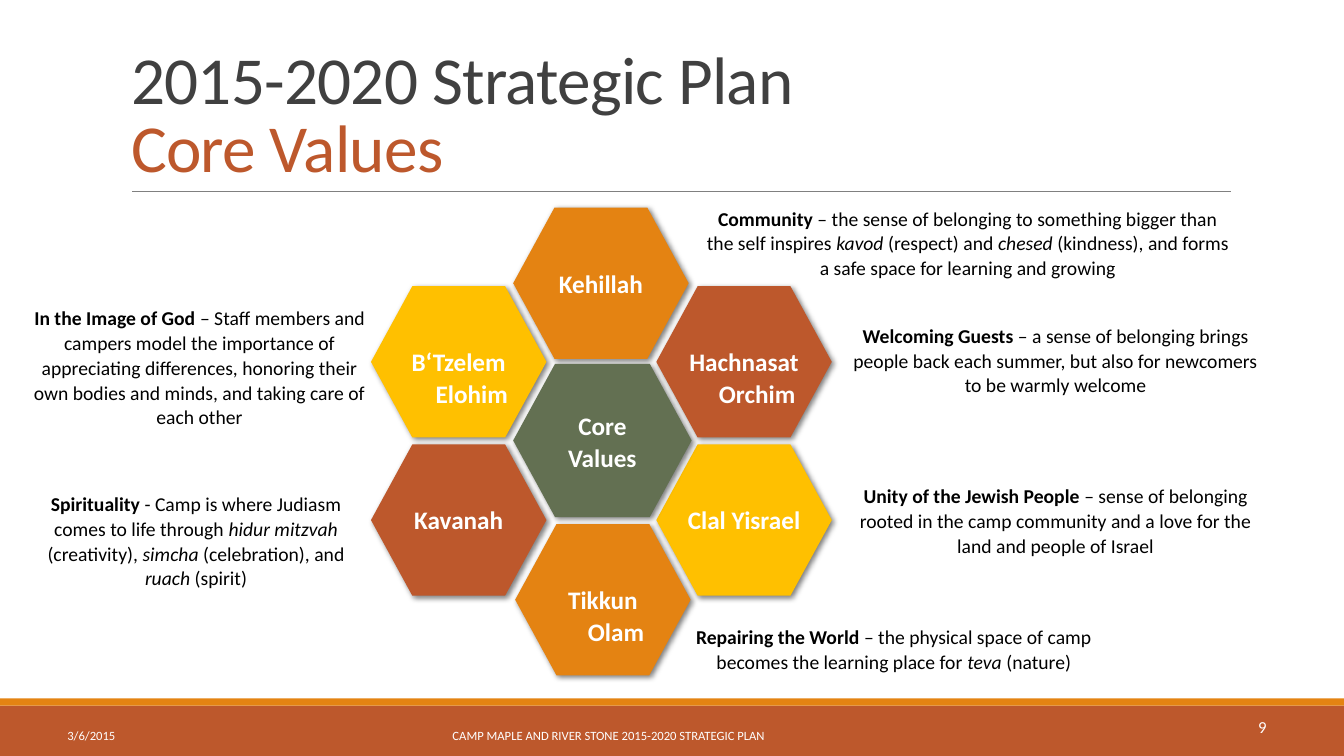
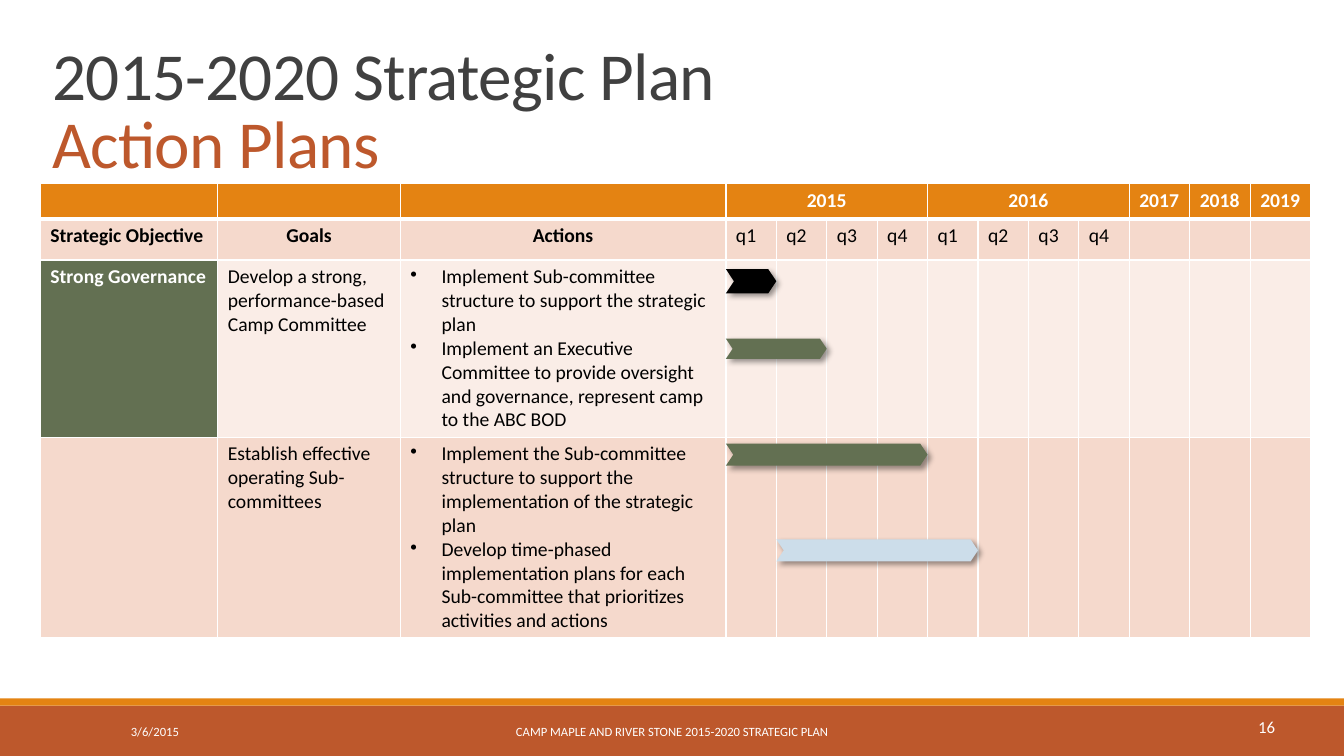
from lxml.etree import SubElement
from pptx import Presentation
from pptx.dml.color import RGBColor
from pptx.enum.shapes import MSO_CONNECTOR, MSO_SHAPE
from pptx.enum.text import MSO_ANCHOR, MSO_AUTO_SIZE, PP_ALIGN
from pptx.oxml.ns import qn
from pptx.util import Inches, Pt

# Shared look
FONT = "Calibri"
RUST, AMBER, GOLD, GREEN = "BD582C", "E48312", "FFC000", "637052"
PALE, FAINT, SKY = "F5D9CC", "FAEDE7", "CCDDEA"
WHITE, BLACK, DARK, GRAY = "FFFFFF", "000000", "404040", "808080"
FOOTER = "CAMP MAPLE AND RIVER STONE 2015-2020 STRATEGIC PLAN"

# Core values: left, top, fill, text
VALUES = [
    (5.09, 2.06, AMBER, "Kehillah"),
    (5.11, 5.2, AMBER, "Tikkun Olam"),
    (6.51, 2.84, RUST, "Hachnasat Orchim"),
    (3.68, 2.84, GOLD, "B‘Tzelem Elohim"),
    (6.51, 4.41, GOLD, "Clal Yisrael"),
    (3.68, 4.41, RUST, "Kavanah"),
]

# Meanings: box, left and right inset, parts (bold, then plain and italic by turns)
NOTES = [
    ((6.87, 2.04, 5.33, 0.73), (0.13, 0),
     ["Community", " – the sense of belonging to something bigger than the self inspires ",
      "kavod", " (respect) and ", "chesed",
      " (kindness), and forms a safe space for learning and growing"]),
    ((8.27, 2.81, 4.27, 1.52), (0.13, 0),
     ["Welcoming Guests ", "– a sense of belonging brings people back each summer, "
      "but also for newcomers to be warmly welcome"]),
    ((8.27, 4.4, 4.27, 1.52), (0.13, 0),
     ["Unity of the Jewish People ", "– sense of belonging rooted in the camp community "
      "and a love for the land and people of Israel"]),
    ((0.26, 2.88, 3.57, 1.52), (0, 0.13),
     ["In the Image of God ", "– Staff members and campers model the importance of "
      "appreciating differences, honoring their own bodies and minds, "
      "and taking care of each other"]),
    ((0.31, 4.6, 3.4, 1.52), (0, 0.13),
     ["Spirituality", " - Camp is where Judiasm comes to life through ",
      "hidur mitzvah ", "(creativity), ", "simcha", " (celebration), and ",
      "ruach", " (spirit)"]),
    ((6.7, 6.04, 4.2, 0.79), (0.13, 0),
     ["Repairing the World ", "– the physical space of camp becomes the learning place for ",
      "teva", " (nature)"]),
]

# Action plan table
COLS = [1.76, 1.81, 3.23] + [0.5] * 8 + [0.6] * 3
ROWS = [0.35, 0.41, 1.75, 1.99]
LEFT, TOP = 0.4, 1.82
START = LEFT + sum(COLS[:3])
FILLS = [AMBER, PALE, FAINT, PALE]
QUARTERS = ["q1", "q2", "q3", "q4"]
CELLS = [
    ["", "", "", "2015", "", "", "", "2016", "", "", "", "2017", "2018", "2019"],
    ["Strategic Objective", "Goals", "Actions"] + QUARTERS * 2 + [""] * 3,
    ["Strong Governance", "Develop a strong, performance-based Camp Committee",
     "Implement Sub-committee structure to support the strategic plan\n"
     "Implement an Executive Committee to provide oversight and governance, "
     "represent camp to the ABC BOD"] + [""] * 11,
    ["", "Establish effective operating Sub-committees",
     "Implement the Sub-committee structure to support the implementation of the "
     "strategic plan\n"
     "Develop time-phased implementation plans for each Sub-committee that "
     "prioritizes activities and actions"] + [""] * 11,
]

# Bars: first quarter, number of quarters, top, height, fill
BARS = [
    (0, 1, 2.67, 0.24, BLACK),
    (0, 2, 3.36, 0.2, GREEN),
    (0, 4, 4.4, 0.22, GREEN),
    (1, 4, 5.35, 0.22, SKY),
]


def color(code):
    return RGBColor.from_string(code)


def box(*sizes):
    return [Inches(size) for size in sizes]


def style(run, size, code, bold=False, italic=False):
    font = run.font
    font.name, font.size, font.bold, font.italic = FONT, Pt(size), bold, italic
    font.color.rgb = color(code)


def hang(para, left, bullet=None):
    """Give a paragraph a hanging indent and, if asked, a bullet."""
    props = para._p.get_or_add_pPr()
    props.set("marL", str(Inches(left)))
    props.set("indent", str(-Inches(left)))
    if bullet:
        SubElement(props, qn("a:buChar")).set("char", bullet)


def inset(frame, left, top, right, bottom):
    frame.margin_left, frame.margin_top = Inches(left), Inches(top)
    frame.margin_right, frame.margin_bottom = Inches(right), Inches(bottom)


def add_shape(slide, kind, place, fill):
    shape = slide.shapes.add_shape(kind, *box(*place))
    shape.shadow.inherit = False
    shape.fill.solid()
    shape.fill.fore_color.rgb = color(fill)
    shape.line.fill.background()
    return shape


def add_shadow(shape, alpha, dist):
    effects = shape.element.spPr.find(qn("a:effectLst"))
    outer = SubElement(effects, qn("a:outerShdw"), blurRad=str(Pt(4)),
                       dist=str(Pt(dist)), dir="2700000", algn="tl", rotWithShape="0")
    tint = SubElement(outer, qn("a:srgbClr"), val=BLACK)
    SubElement(tint, qn("a:alpha"), val=str(alpha * 1000))


def add_label(slide, place, text, size, align=PP_ALIGN.LEFT, wrap=True):
    frame = slide.shapes.add_textbox(*box(*place)).text_frame
    frame.word_wrap = wrap
    frame.vertical_anchor = MSO_ANCHOR.MIDDLE if wrap else MSO_ANCHOR.TOP
    frame.text = text
    para = frame.paragraphs[0]
    para.alignment = align
    style(para.runs[0], size, WHITE)


def add_note(slide, place, sides, parts):
    frame = slide.shapes.add_textbox(*box(*place)).text_frame
    frame.word_wrap = True
    frame.vertical_anchor = MSO_ANCHOR.MIDDLE
    inset(frame, sides[0], 0, sides[1], 0)
    para = frame.paragraphs[0]
    para.alignment, para.line_spacing = PP_ALIGN.CENTER, 1.05
    for index, part in enumerate(parts):
        run = para.add_run()
        run.text = part
        style(run, 14, BLACK, index == 0, index > 0 and index % 2 == 0)


def add_hexagon(slide, place, fill, text, middle=False):
    shape = add_shape(slide, MSO_SHAPE.HEXAGON, place, fill)
    shape.adjustments[0] = 0.273
    add_shadow(shape, 50, 2)
    frame = shape.text_frame
    frame.word_wrap = True
    frame.text = text
    para = frame.paragraphs[0]
    para.alignment, para.line_spacing = PP_ALIGN.CENTER, 1.05
    style(para.runs[0], 18, WHITE, True)
    if middle:
        frame.vertical_anchor = MSO_ANCHOR.MIDDLE
        inset(frame, 0.1, 0, 0.1, 0)
    else:
        frame.vertical_anchor = MSO_ANCHOR.TOP
        inset(frame, 0, 0.34, 0, 0)
        hang(para, 0.26)


def dress(slide, layout):
    """Draw the bands and the title rule, then move them to the layout."""
    low = add_shape(slide, MSO_SHAPE.RECTANGLE, (0, 7, 13.33, 0.5), RUST)
    high = add_shape(slide, MSO_SHAPE.RECTANGLE, (0, 6.93, 13.33, 0.07), AMBER)
    rule = slide.shapes.add_connector(MSO_CONNECTOR.STRAIGHT, *box(1.31, 1.9, 12.21, 1.9))
    rule.line.color.rgb, rule.line.width = color(GRAY), Pt(0.5)
    SubElement(rule.element.spPr, qn("a:effectLst"))
    for part in (low, high, rule):
        layout.shapes.element.append(part.element)


def add_slide(deck, layout, topic, corner):
    slide = deck.slides.add_slide(layout)
    title = slide.shapes.title
    title.left, title.top, title.width, title.height = box(*corner, 11, 1.59)
    frame = title.text_frame
    frame.text = "2015-2020 Strategic Plan\v" + topic
    frame.vertical_anchor, frame.auto_size = MSO_ANCHOR.BOTTOM, MSO_AUTO_SIZE.NONE
    para = frame.paragraphs[0]
    para.alignment, para.line_spacing = PP_ALIGN.LEFT, 0.85
    for run, code in zip(para.runs, (DARK, RUST)):
        style(run, 48, code)
        run.font._element.set("spc", "-50")
    return slide


def add_footer(slide, left, top, number):
    add_label(slide, (left, top, 2.7, 0.4), "3/6/2015", 9)
    add_label(slide, (left + 2.83, top, 5.27, 0.4), FOOTER, 9, PP_ALIGN.CENTER)
    add_label(slide, (12.38, 7.06, 0.37, 0.3), number, 12, wrap=False)


def add_borders(cell, header):
    props = cell._tc.get_or_add_tcPr()
    for index, side in enumerate("LRTB"):
        width = 3 if header and side == "B" else 1
        line = SubElement(props, qn("a:ln" + side), w=str(Pt(width)))
        SubElement(SubElement(line, qn("a:solidFill")), qn("a:srgbClr"), val=WHITE)
        props.insert(index, line)


def fill_cell(cell, row, col, text):
    strong = (row, col) == (2, 0)
    cell.fill.solid()
    cell.fill.fore_color.rgb = color(GREEN if strong else FILLS[row])
    add_borders(cell, row == 0)
    cell.text = text
    centered = (row == 0 and col < 11) or (row == 1 and col in (1, 2))
    bold = row == 0 or strong or (row == 1 and col < 3)
    for para in cell.text_frame.paragraphs:
        para.alignment = PP_ALIGN.CENTER if centered else PP_ALIGN.LEFT
        if row > 1 and col == 2:
            hang(para, 0.31, "•")
        for run in para.runs:
            style(run, 14, WHITE if row == 0 or strong else BLACK, bold)
        if not text:
            SubElement(para._p, qn("a:endParaRPr"), sz="1400")


def add_plan(slide):
    place = box(LEFT, TOP, sum(COLS), sum(ROWS))
    table = slide.shapes.add_table(len(ROWS), len(COLS), *place).table
    for column, width in zip(table.columns, COLS):
        column.width = Inches(width)
    for row, height in enumerate(ROWS):
        table.rows[row].height = Inches(height)
        for col, text in enumerate(CELLS[row]):
            fill_cell(table.cell(row, col), row, col, text)
    for first in (3, 7):
        table.cell(0, first).merge(table.cell(0, first + 3))


def add_bar(slide, first, count, top, height, fill):
    place = (START + first * 0.5, top, count * 0.5, height)
    bar = add_shape(slide, MSO_SHAPE.CHEVRON, place, fill)
    bar.adjustments[0] = 0.333
    add_shadow(bar, 40, 3)


def main():
    deck = Presentation()
    deck.slide_width, deck.slide_height = box(13.33, 7.5)
    layout = deck.slide_layouts[5]

    # Core values
    slide = add_slide(deck, layout, "Core Values", (1.2, 0.31))
    dress(slide, layout)
    for left, top, fill, text in VALUES:
        add_hexagon(slide, (left, top, 1.74, 1.5), fill, text)
    add_hexagon(slide, (5.09, 3.61, 1.77, 1.52), GREEN, "Core Values", middle=True)
    for note in NOTES:
        add_note(slide, *note)
    add_footer(slide, 0.57, 7.1, "9")

    # Action plans
    slide = add_slide(deck, layout, "Action Plans", (0.42, 0.27))
    add_plan(slide)
    for bar in BARS:
        add_bar(slide, *bar)
    add_footer(slide, 1.2, 7.06, "16")

    deck.save("out.pptx")


if __name__ == "__main__":
    main()
